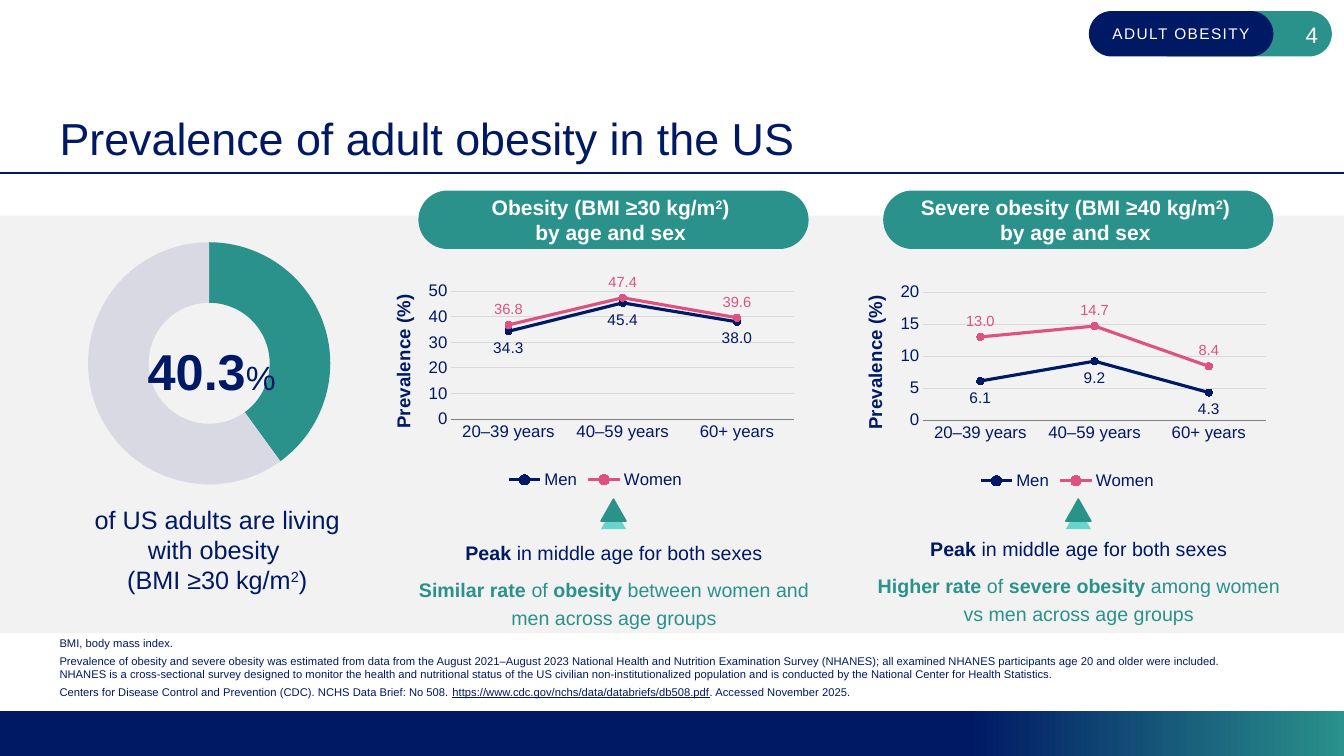
from copy import deepcopy
from dataclasses import dataclass
from typing import Any, NamedTuple

from lxml import etree
from pptx import Presentation
from pptx.chart.data import CategoryChartData
from pptx.dml.color import RGBColor
from pptx.enum.chart import XL_CHART_TYPE as CT, XL_LABEL_POSITION as LP
from pptx.enum.chart import XL_LEGEND_POSITION as LEG, XL_MARKER_STYLE as MK, XL_TICK_MARK as TM
from pptx.enum.shapes import MSO_CONNECTOR as CN, MSO_SHAPE as SH
from pptx.enum.text import MSO_ANCHOR as AN, PP_ALIGN as AL
from pptx.oxml import parse_xml
from pptx.oxml.ns import nsdecls, qn
from pptx.util import Inches, Pt

COLORS = {"navy": "001965", "teal": "2A918B", "aqua": "69D3CD", "pink": "DE5281",
          "band": "F2F2F2", "ring": "D8D9E3", "grid": "D9D9D9", "axis": "808080",
          "white": "FFFFFF"}
AGES = ("20‒39 years", "40‒59 years", "60+ years")
BOLD = {"bold": True}
SUP = {"baseline": "30000"}


class Run(NamedTuple):
    text: str
    fmt: dict[str, Any] = {}


class Box(NamedTuple):
    left: float
    top: float
    width: float
    height: float

    def emu(self) -> list[int]:
        return [Inches(v) for v in self]


class Sex(NamedTuple):
    name: str
    color: str
    label_size: float
    label_pos: Any


@dataclass
class Panel:
    chart: Box
    pill: Box
    note: Box
    heading: str
    top_value: int
    step: int
    men: tuple[float, ...]
    women: tuple[float, ...]
    finding: list[Run]


SEXES = (Sex("Men", "navy", 11, LP.BELOW), Sex("Women", "pink", 10.5, LP.ABOVE))
PANELS = (
    Panel(Box(3.78, 2.13, 4.25, 2.76), Box(4.15, 1.89, 3.87, 0.58), Box(4.1, 5.32, 3.98, 0.93),
          "Obesity (BMI ≥30 kg/m", 50, 10, (34.3, 45.4, 38.0), (36.8, 47.4, 39.6),
          [Run("Similar rate ", BOLD), Run("of "), Run("obesity", BOLD),
           Run(" between women and men across age groups")]),
    Panel(Box(8.46, 2.14, 4.25, 2.76), Box(8.76, 1.89, 3.87, 0.58), Box(8.67, 5.28, 4.06, 0.93),
          "Severe obesity (BMI ≥40 kg/m", 20, 5, (6.1, 9.2, 4.3), (13.0, 14.7, 8.4),
          [Run("Higher rate ", BOLD), Run("of "), Run("severe obesity ", BOLD),
           Run("among women vs men across age groups")]),
)


def rgb(name: str) -> RGBColor:
    return RGBColor.from_string(COLORS[name])


def set_attrs(obj: Any, values: dict[str, Any]) -> None:
    for key, value in values.items():
        setattr(obj, key, value)


def set_font(font: Any, size: float, color: str, **extra: Any) -> None:
    set_attrs(font, {"name": "Arial", "size": Pt(size), **extra})
    font.color.rgb = rgb(color)


def add_runs(p: Any, runs: list[Run], size: float, color: str) -> None:
    for run in runs:
        fmt = dict(run.fmt)
        xml_attrs = {k: fmt.pop(k) for k in ("baseline", "spc") if k in fmt}
        for i, line in enumerate(run.text.split("\n")):
            if i:
                p.add_line_break()
            r = p.add_run()
            r.text = line
            set_font(r.font, fmt.get("pt", size), color,
                     **{k: v for k, v in fmt.items() if k != "pt"})
            for key, value in xml_attrs.items():
                r.font._element.set(key, value)


def write(sp: Any, paras: list[list[Run]], size: float, colors: list[str], anchor: Any = AN.TOP,
          insets: tuple[float, float] = (0, 0), wrap: bool = True, **para_fmt: Any) -> None:
    tf = sp.text_frame
    dx, dy = (Inches(v) for v in insets)
    set_attrs(tf, {"margin_left": dx, "margin_right": dx, "margin_top": dy, "margin_bottom": dy,
                   "vertical_anchor": anchor, "word_wrap": wrap})
    for i, runs in enumerate(paras):
        p = tf.add_paragraph() if i else tf.paragraphs[0]
        set_attrs(p, para_fmt)
        add_runs(p, runs, size, colors[min(i, len(colors) - 1)])


def add_solid(shapes: Any, kind: Any, box: Box, color: str) -> Any:
    sp = shapes.add_shape(kind, *box.emu())
    sp.shadow.inherit = False
    sp.fill.solid()
    sp.fill.fore_color.rgb = rgb(color)
    sp.line.fill.background()
    if kind == SH.ROUNDED_RECTANGLE:
        sp.adjustments[0] = 0.5
    return sp


def add_text(shapes: Any, box: Box, *args: Any, **kwargs: Any) -> None:
    write(shapes.add_textbox(*box.emu()), *args, **kwargs)


def add_plain_chart(shapes: Any, kind: Any, box: Box, data: CategoryChartData,
                    plot_area: Box) -> Any:
    chart = shapes.add_chart(kind, *box.emu(), data).chart
    chart.has_title = False
    set_font(chart.font, 10, "navy")
    c = chart._chartSpace.find(qn("c:chart"))
    c.addnext(parse_xml(f"<c:spPr {nsdecls('c', 'a')}><a:noFill/><a:ln><a:noFill/></a:ln></c:spPr>"))
    area = c.find(qn("c:plotArea"))
    for old in area.findall(qn("c:layout")):
        area.remove(old)
    layout = parse_xml(f"<c:layout {nsdecls('c')}><c:manualLayout/></c:layout>")
    parts = [("layoutTarget", "inner"), ("xMode", "edge"), ("yMode", "edge"),
             *zip("xywh", plot_area)]
    for tag, value in parts:
        etree.SubElement(layout[0], qn(f"c:{tag}")).set("val", str(value))
    area.insert(0, layout)
    return chart


def add_trend_chart(shapes: Any, panel: Panel) -> None:
    data = CategoryChartData(number_format="0.0")
    data.categories = AGES
    for sex, values in zip(SEXES, (panel.men, panel.women)):
        data.add_series(sex.name, values)
    chart = add_plain_chart(shapes, CT.LINE_MARKERS, panel.chart, data,
                            Box(0.164, 0.275, 0.8, 0.46))
    chart.has_legend = True
    set_attrs(chart.legend, {"position": LEG.BOTTOM, "include_in_layout": False})
    set_font(chart.legend.font, 12, "navy")
    cat, val = chart.category_axis, chart.value_axis
    for axis in (cat, val):
        set_attrs(axis, {"major_tick_mark": TM.NONE, "minor_tick_mark": TM.NONE})
        set_font(axis.tick_labels.font, 12, "navy")
    set_attrs(val, {"minimum_scale": 0, "maximum_scale": panel.top_value,
                    "major_unit": panel.step, "has_major_gridlines": True})
    set_attrs(val.tick_labels, {"number_format": "0", "number_format_is_linked": False})
    val.format.line.fill.background()
    for line, color in ((cat.format.line, "axis"), (val.major_gridlines.format.line, "grid")):
        line.color.rgb = rgb(color)
        line.width = Pt(0.75)
    add_runs(val.axis_title.text_frame.paragraphs[0], [Run("Prevalence (%)", BOLD)], 13.3, "navy")
    for series, sex in zip(chart.plots[0].series, SEXES):
        series.smooth = False
        series.format.line.color.rgb = rgb(sex.color)
        series.format.line.width = Pt(2.25)
        set_attrs(series.marker, {"style": MK.CIRCLE, "size": 5})
        series.marker.format.fill.solid()
        series.marker.format.fill.fore_color.rgb = rgb(sex.color)
        series.marker.format.line.color.rgb = rgb(sex.color)
        labels = series.data_labels
        set_attrs(labels, {"show_value": True, "position": sex.label_pos,
                           "number_format": "0.0", "number_format_is_linked": False})
        set_font(labels.font, sex.label_size, sex.color)


def add_share_chart(shapes: Any) -> None:
    data = CategoryChartData()
    data.categories = ("1", "2")
    data.add_series("Series 1", (40, 60))
    chart = add_plain_chart(shapes, CT.DOUGHNUT, Box(0.07, 2.27, 4.01, 2.67), data,
                            Box(0.2, 0.05, 0.6, 0.9))
    chart.has_legend = False
    chart._chartSpace.find(".//" + qn("c:holeSize")).set("val", "70")
    for i, color in enumerate(("teal", "ring")):
        fmt = chart.plots[0].series[0].points[i].format
        fmt.fill.solid()
        fmt.fill.fore_color.rgb = rgb(color)
        fmt.line.fill.background()


def add_frame(shapes: Any) -> None:
    bar = add_solid(shapes, SH.RECTANGLE, Box(0, 7.05, 13.33, 0.45), "navy")
    bar.fill.gradient()
    bar.fill.gradient_angle = 0
    for stop, color, pos in zip(bar.fill.gradient_stops, ("navy", "teal"), (0, 1)):
        stop.color.rgb = rgb(color)
        stop.position = pos
    first = bar._element.find(".//" + qn("a:gs"))
    middle = deepcopy(first)
    middle.set("pos", "72000")
    first.addnext(middle)
    rule = shapes.add_connector(CN.STRAIGHT, 0, Inches(1.72), Inches(13.33), Inches(1.72))
    rule.line.color.rgb = rgb("navy")
    rule.line.width = Pt(1.5)
    etree.SubElement(rule._element.spPr, qn("a:effectLst"))
    badge = shapes.add_group_shape().shapes
    add_solid(badge, SH.ROUNDED_RECTANGLE, Box(11.38, 0.11, 1.83, 0.45), "teal")
    tag = add_solid(badge, SH.ROUNDED_RECTANGLE, Box(10.8, 0.11, 1.83, 0.45), "navy")
    write(tag, [[Run("ADULT OBESITY", {"spc": "100"})]], 11, ["white"], AN.MIDDLE,
          (0.08, 0.04), alignment=AL.CENTER)
    add_solid(shapes, SH.RECTANGLE, Box(0, 2.14, 13.33, 4.14), "band")
    add_text(shapes, Box(0.59, 0.45, 11.92, 1.18), [[Run("Prevalence of adult obesity in the US")]],
             32, ["navy"], AN.BOTTOM)
    add_text(shapes, Box(0.59, 6.58, 11.92, 0.35), [
        [Run("BMI, body mass index.")],
        [Run("Prevalence of obesity and severe obesity was estimated from data from the August 2021–August 2023 National Health and Nutrition Examination Survey (NHANES); all examined NHANES participants age 20 and older were included. NHANES is a cross-sectional survey designed to monitor the health and nutritional status of the US civilian non-institutionalized population and is conducted by the National Center for Health Statistics.")],
        [Run("Centers for Disease Control and Prevention (CDC). NCHS Data Brief: No 508. "),
         Run("https://www.cdc.gov/nchs/data/databriefs/db508.pdf", {"underline": True}),
         Run(". Accessed November 2025.")],
    ], 8, ["navy"], AN.BOTTOM, space_after=Pt(3))
    add_text(shapes, Box(12.54, 0.14, 0.63, 0.4), [[Run("4")]], 16, ["white"], AN.MIDDLE,
             (0.1, 0.05), alignment=AL.RIGHT)


def add_share(shapes: Any) -> None:
    add_share_chart(shapes)
    add_text(shapes, Box(1.46, 3.25, 1.28, 0.66), [[Run("40.3", BOLD), Run("%", {"pt": 24})]],
             36, ["navy"], wrap=False, alignment=AL.CENTER, line_spacing=1.2)
    add_text(shapes, Box(0.64, 4.95, 3.03, 1.01),
             [[Run("of US adults are living with obesity \n(BMI ≥30 kg/m"), Run("2", SUP), Run(")")]],
             18, ["navy"], insets=(0.1, 0.05), alignment=AL.CENTER)


def add_panel(shapes: Any, panel: Panel) -> None:
    add_trend_chart(shapes, panel)
    add_text(shapes, panel.note, [[Run("Peak ", BOLD), Run("in middle age for both sexes")],
                                  panel.finding],
             14, ["navy", "teal"], alignment=AL.CENTER, line_spacing=1.2, space_after=Pt(6))
    pill = add_solid(shapes, SH.ROUNDED_RECTANGLE, panel.pill, "teal")
    write(pill, [[Run(panel.heading, BOLD), Run("2", BOLD | SUP), Run(") \nby age and sex ", BOLD)]],
          15, ["white"], AN.MIDDLE, alignment=AL.CENTER)
    pointer = shapes.add_group_shape().shapes
    left = panel.pill.left + 1.81
    add_solid(pointer, SH.ISOSCELES_TRIANGLE, Box(left, 5.03, 0.25, 0.22), "aqua")
    front = add_solid(pointer, SH.ISOSCELES_TRIANGLE, Box(left, 4.95, 0.25, 0.22), "teal")
    front.line.color.rgb = rgb("teal")
    front.line.width = Pt(1)


def main() -> None:
    prs = Presentation()
    set_attrs(prs, {"slide_width": Inches(13.33), "slide_height": Inches(7.5)})
    s = prs.slides.add_slide(prs.slide_layouts[6])
    add_frame(s.shapes)
    add_share(s.shapes)
    for panel in PANELS:
        add_panel(s.shapes, panel)
    prs.save("out.pptx")


if __name__ == "__main__":
    main()
